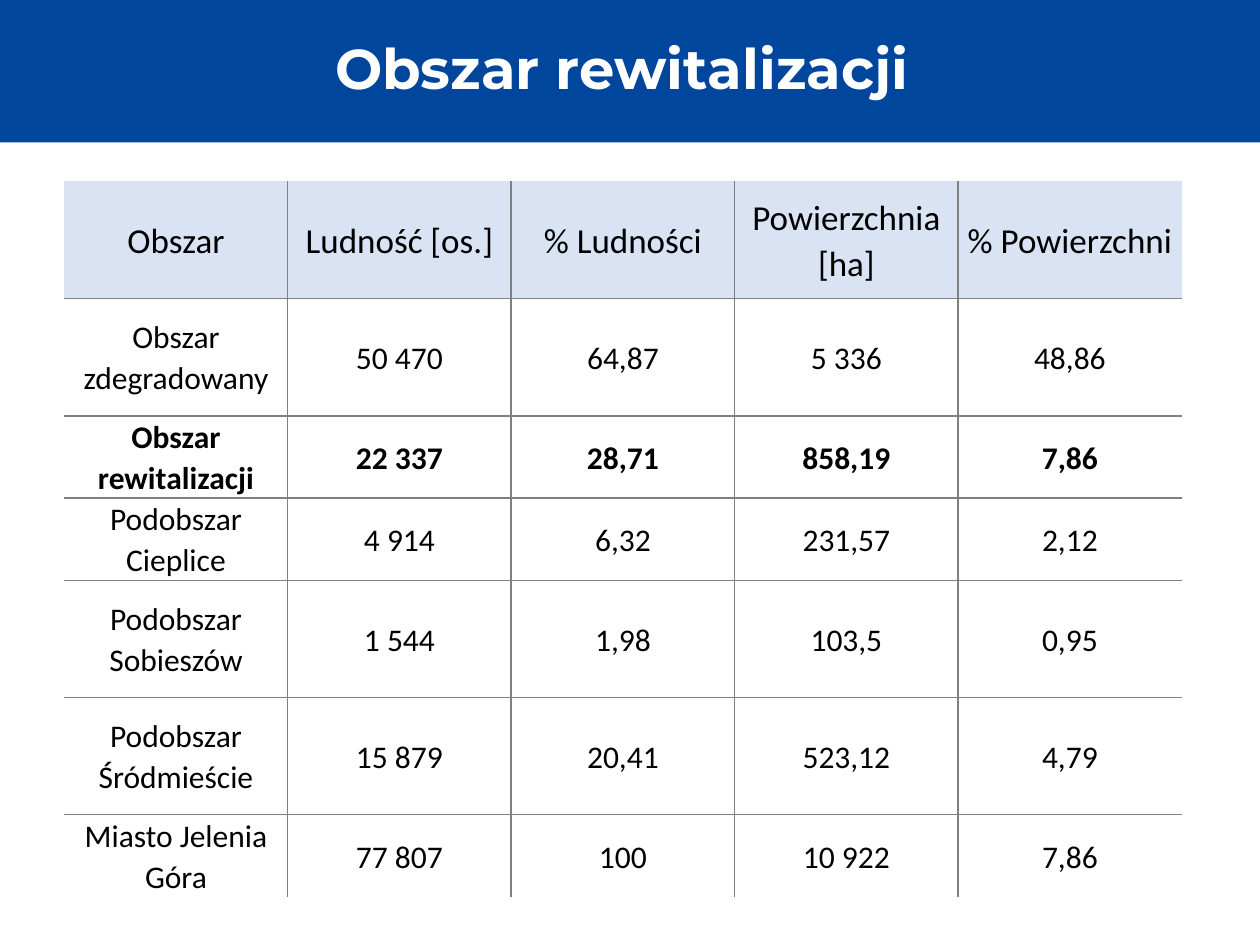
"""Build the slide with the table of revitalisation areas."""
from dataclasses import dataclass

import pptx
import pptx.dml.color
import pptx.enum.shapes
import pptx.enum.text
import pptx.oxml.xmlchemy
import pptx.util
from lxml import etree
from pptx.dml.color import RGBColor
from pptx.util import Inches

BLUE = RGBColor(0x00, 0x46, 0x9C)
PALE_BLUE = RGBColor(0xDA, 0xE3, 0xF3)
GRAY = RGBColor(0x80, 0x80, 0x80)
WHITE = RGBColor(0xFF, 0xFF, 0xFF)
BLACK = RGBColor(0x00, 0x00, 0x00)
DRAWING = "{http://schemas.openxmlformats.org/drawingml/2006/main}"


@dataclass(frozen=True)
class TextStyle:
    font: str
    size: int
    color: RGBColor
    bold: bool
    spacing: float


@dataclass(frozen=True)
class AreaRow:
    texts: tuple[str, ...]
    height: float
    style: TextStyle
    fill: RGBColor | None = None


TITLE = TextStyle("Montserrat", 32, WHITE, True, 0.9)
HEADER = TextStyle("Calibri", 20, BLACK, False, 1.07)
BODY = TextStyle("Calibri", 18, BLACK, False, 1.07)
STRONG = TextStyle("Calibri", 18, BLACK, True, 1.07)
TALL, SHORT = 0.93, 0.58
COLUMN_WIDTH = 1.774

ROWS = (
    AreaRow(("Obszar", "Ludność [os.]", "% Ludności", "Powierzchnia\n[ha]", "% Powierzchni"),
            TALL, HEADER, PALE_BLUE),
    AreaRow(("Obszar zdegradowany", "50 470", "64,87", "5 336", "48,86"), TALL, BODY),
    AreaRow(("Obszar rewitalizacji", "22 337", "28,71", "858,19", "7,86"), SHORT, STRONG),
    AreaRow(("Podobszar Cieplice", "4 914", "6,32", "231,57", "2,12"), SHORT, BODY),
    AreaRow(("Podobszar Sobieszów", "1 544", "1,98", "103,5", "0,95"), TALL, BODY),
    AreaRow(("Podobszar Śródmieście", "15 879", "20,41", "523,12", "4,79"), TALL, BODY),
    AreaRow(("Miasto Jelenia Góra", "77 807", "100", "10 922", "7,86"), SHORT, BODY),
)


def write_text(frame, text: str, style: TextStyle) -> None:
    """Fill a text frame with centred text in one style."""
    frame.text = text
    for paragraph in frame.paragraphs:
        paragraph.alignment = pptx.enum.text.PP_ALIGN.CENTER
        paragraph.line_spacing = style.spacing
        for span in paragraph.runs:
            span.font.name = style.font
            span.font.size = pptx.util.Pt(style.size)
            span.font.bold = style.bold
            span.font.color.rgb = style.color


def set_borders(cell, sides: dict[str, bool]) -> None:
    """Draw a gray line on each side marked true and none on the others."""
    properties = cell._tc.get_or_add_tcPr()
    for side, visible in sides.items():
        line = etree.SubElement(properties, f"{DRAWING}ln{side}", w=str(pptx.util.Pt(1)))
        if visible:
            fill = etree.SubElement(line, f"{DRAWING}solidFill")
            etree.SubElement(fill, f"{DRAWING}srgbClr", val=str(GRAY))
        else:
            etree.SubElement(line, f"{DRAWING}noFill")


def add_title(page, text: str) -> None:
    """Add the title band across the top."""
    box = page.shapes.add_shape(pptx.enum.shapes.MSO_SHAPE.RECTANGLE,
                                0, 0, Inches(10), Inches(1.13))
    box.shadow.inherit = False
    box.fill.solid()
    box.fill.fore_color.rgb = BLUE
    box.line.fill.background()
    box.text_frame.vertical_anchor = pptx.enum.text.MSO_ANCHOR.MIDDLE
    write_text(box.text_frame, text, TITLE)


def add_area_table(page, rows: tuple[AreaRow, ...]) -> None:
    """Add the table with inner grid lines only."""
    column_count = len(rows[0].texts)
    table = page.shapes.add_table(
        len(rows), column_count, Inches(0.51), Inches(1.44),
        Inches(COLUMN_WIDTH * column_count), Inches(sum(row.height for row in rows))).table
    table.first_row = False
    table.horz_banding = False
    for column in table.columns:
        column.width = Inches(COLUMN_WIDTH)
    for row_index, row in enumerate(rows):
        table.rows[row_index].height = Inches(row.height)
        for column_index, text in enumerate(row.texts):
            cell = table.cell(row_index, column_index)
            cell.margin_left = cell.margin_right = Inches(0.05)
            cell.margin_top = cell.margin_bottom = 0
            cell.vertical_anchor = pptx.enum.text.MSO_ANCHOR.MIDDLE
            write_text(cell.text_frame, text, row.style)
            set_borders(cell, {"L": column_index > 0, "R": column_index < column_count - 1,
                               "T": row_index > 0, "B": row_index < len(rows) - 1})
            if row.fill is None:
                cell.fill.background()
            else:
                cell.fill.solid()
                cell.fill.fore_color.rgb = row.fill


def main() -> None:
    """Build and save the deck."""
    deck = pptx.Presentation()
    deck.slide_width, deck.slide_height = Inches(10), Inches(7.5)
    page = deck.slides.add_slide(deck.slide_layouts[6])
    add_title(page, "Obszar rewitalizacji ")
    add_area_table(page, ROWS)
    deck.save("out.pptx")


if __name__ == "__main__":
    main()
